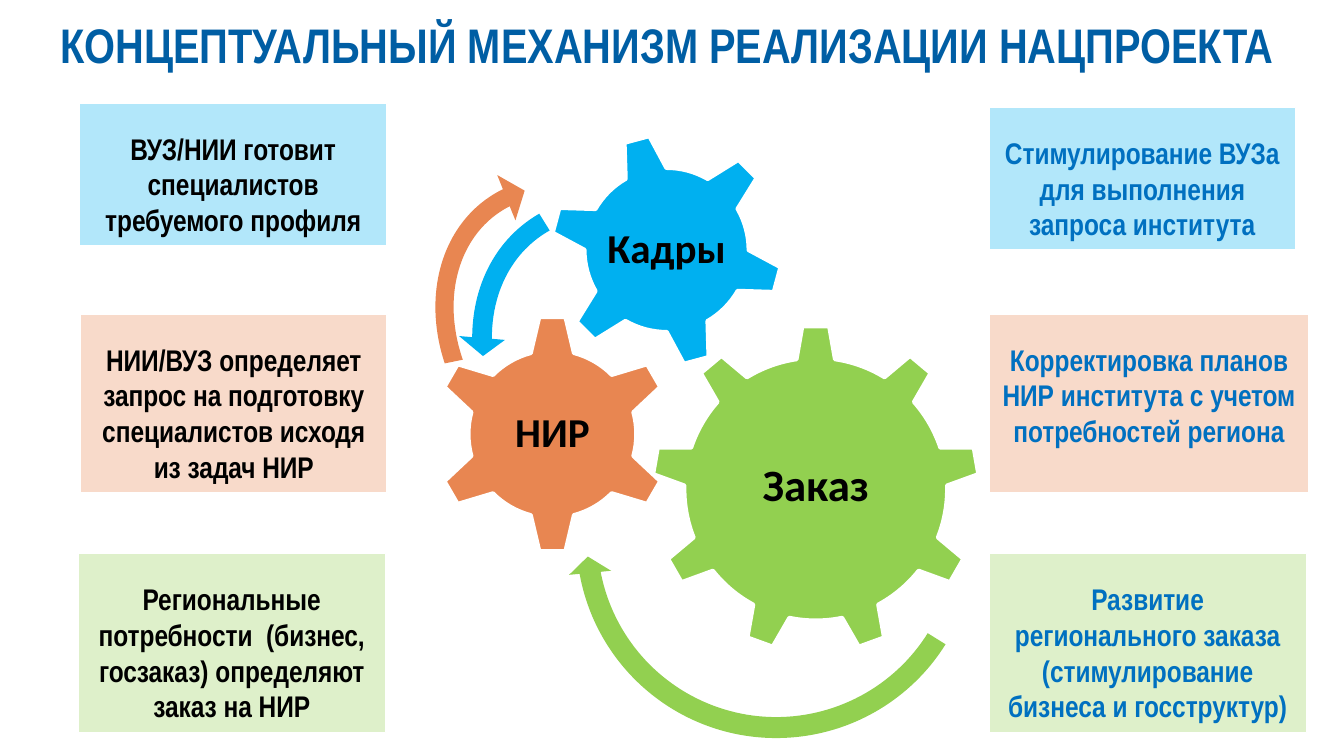
from lxml import etree
from pptx import Presentation
from pptx.dml.color import RGBColor
from pptx.enum.shapes import MSO_SHAPE
from pptx.enum.text import MSO_ANCHOR, PP_ALIGN
from pptx.oxml.ns import qn
from pptx.util import Inches, Pt

COLORS = {
    "title": "005EA4", "green": "92D050", "orange": "E88651", "blue": "00B0F0",
    "white": "FFFFFF", "black": "000000", "accent": "0070C0",
}

# Widescreen 16:9 slide
prs = Presentation()
prs.slide_width = Inches(10)
prs.slide_height = Inches(10) * 9 // 16
slide = prs.slides.add_slide(prs.slide_layouts[6])


def add_filled(kind, box, color, line_width=None):
    s = slide.shapes.add_shape(kind, *[Inches(v) for v in box])
    s.shadow.inherit = False
    s.fill.solid()
    s.fill.fore_color.rgb = RGBColor.from_string(COLORS[color])
    if line_width:
        s.line.color.rgb = RGBColor.from_string(COLORS["white"])
        s.line.width = Pt(line_width)
    else:
        s.line.fill.background()
    return s


def write(s, text, font, size, color):
    tf = s.text_frame
    tf.word_wrap = True
    p = tf.paragraphs[0]
    p.text = text
    p.font.name, p.font.size, p.font.bold = font, Pt(size), True
    p.font.color.rgb = RGBColor.from_string(COLORS[color])
    return tf, p


# Title
s = slide.shapes.add_textbox(Inches(0.35), Inches(0.13), Inches(9.29), Inches(0.47))
tf, p = write(s, "КОНЦЕПТУАЛЬНЫЙ МЕХАНИЗМ РЕАЛИЗАЦИИ НАЦПРОЕКТА", "Arial Narrow", 26, "title")
p.line_spacing = 0.85

# Gears, each with a centred label: left, top, size, rotation, label box
gears = [
    (MSO_SHAPE.GEAR_9, 4.85, 2.42, 2.44, 0, "green", "Заказ", 24, (5.34, 2.99, 1.46, 1.26)),
    (MSO_SHAPE.GEAR_6, 3.22, 2.34, 1.78, 0, "orange", "НИР", 22, (3.67, 2.79, 0.88, 0.88)),
    (MSO_SHAPE.GEAR_6, 4.09, 0.99, 1.74, 345, "blue", "Кадры", 22, (4.47, 1.37, 0.98, 0.98)),
]
for kind, left, top, size, angle, color, label, font_size, label_box in gears:
    s = add_filled(kind, (left, top, size, size), color, 2)
    s.rotation = angle
    s = slide.shapes.add_textbox(*[Inches(v) for v in label_box])
    tf, p = write(s, label, "Calibri", font_size, "black")
    tf.vertical_anchor = MSO_ANCHOR.MIDDLE
    tf.margin_left = tf.margin_right = tf.margin_top = tf.margin_bottom = Inches(0.03)
    p.alignment = PP_ALIGN.CENTER
    p.line_spacing = 0.9

# Curved arrows: kind, box, rotation, mirrored, adjustments, colour
arrows = [
    (MSO_SHAPE.CIRCULAR_ARROW, (4.21, 2.44, 3.13, 3.13), 127.6, False,
     (0.05, 2.99, 25.13, 158.68, 0.05), "green"),
    (MSO_SHAPE.LEFT_CIRCULAR_ARROW, (2.98, 1.36, 2.71, 2.27), 235.8, True,
     (0.06, 4.3, 104.89, 148.38, 0.08), "orange"),
    (MSO_SHAPE.CIRCULAR_ARROW, (3.27, 1.52, 2.92, 2.45), 233.3, True,
     (0.06, 3.94, 133.14, 105.08, 0.07), "blue"),
]
for kind, box, angle, mirrored, adjustments, color in arrows:
    s = add_filled(kind, box, color)
    s.rotation = angle
    if mirrored:
        s._element.spPr.find(qn("a:xfrm")).set("flipH", "1")
    for i, value in enumerate(adjustments):
        s.adjustments[i] = value

# Text panels: causes on the left, effects on the right
panels = [
    ((0.58, 4.12, 2.29, 1.33), "green", "black",
     "Региональные потребности  (бизнес, госзаказ) определяют заказ на НИР"),
    ((0.6, 2.34, 2.28, 1.33), "orange", "black",
     "НИИ/ВУЗ определяет запрос на подготовку специалистов исходя из задач НИР"),
    ((0.59, 0.77, 2.29, 1.06), "blue", "black",
     "ВУЗ/НИИ готовит специалистов требуемого профиля"),
    ((7.36, 4.12, 2.36, 1.33), "green", "accent",
     "Развитие регионального заказа (стимулирование бизнеса и госструктур)"),
    ((7.36, 2.34, 2.38, 1.33), "orange", "accent",
     "Корректировка планов НИР института с учетом потребностей региона"),
    ((7.36, 0.8, 2.28, 1.06), "blue", "accent",
     "Стимулирование ВУЗа для выполнения запроса института"),
]
for box, fill, text_color, text in panels:
    s = add_filled(MSO_SHAPE.RECTANGLE, box, fill, 0.75)
    rgb = s._element.spPr.find(qn("a:solidFill")).find(qn("a:srgbClr"))
    etree.SubElement(rgb, qn("a:alpha"), val="30000")
    tf, p = write(s, text, "Arial Narrow", 16, text_color)
    tf.vertical_anchor = MSO_ANCHOR.TOP
    tf.margin_top = Inches(0.2)
    p.alignment = PP_ALIGN.CENTER

prs.save("out.pptx")
